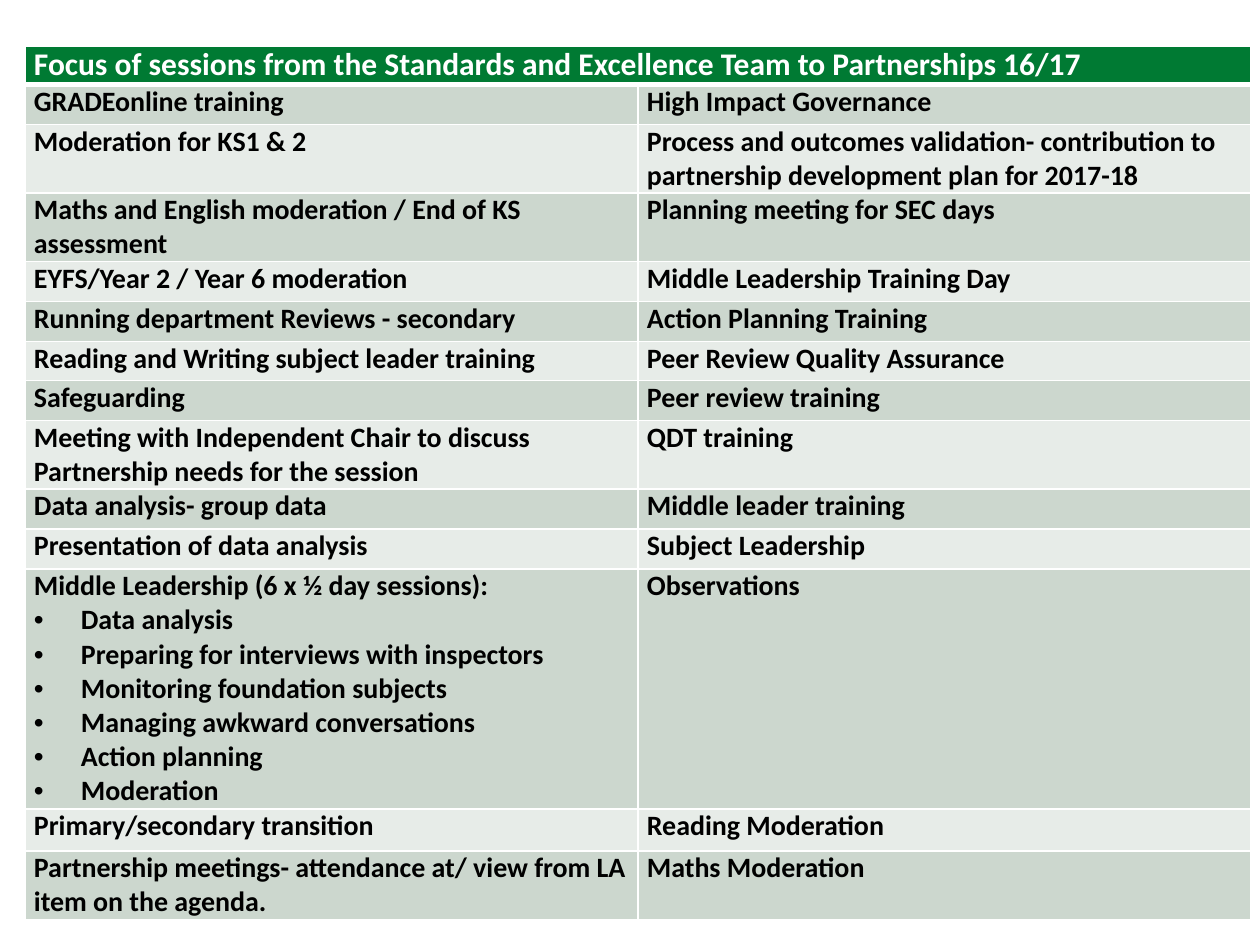
import pptx
import pptx.util
from pptx.dml.color import RGBColor
from pptx.oxml.ns import qn
from lxml import etree

HEADING = "Focus of sessions from the Standards and Excellence Team to Partnerships 16/17"
# row height in px, left paragraphs, right paragraphs; "•" marks a bullet
SESSIONS = [
    (40, ["GRADEonline training"], ["High Impact Governance"]),
    (68, ["Moderation for KS1 & 2"],
     ["Process and outcomes validation- contribution to partnership development plan for 2017-18"]),
    (68, ["Maths and English moderation / End of KS assessment"], ["Planning meeting for SEC days"]),
    (40, ["EYFS/Year 2 / Year 6 moderation"], ["Middle Leadership Training Day"]),
    (40, ["Running department Reviews - secondary"], ["Action Planning Training"]),
    (39, ["Reading and Writing subject leader training"], ["Peer Review Quality Assurance"]),
    (40, ["Safeguarding"], ["Peer review training"]),
    (68, ["Meeting with Independent Chair to discuss Partnership needs for the session"],
     ["QDT training"]),
    (40, ["Data analysis- group data"], ["Middle leader training"]),
    (40, ["Presentation of data analysis"], ["Subject Leadership"]),
    (240, ["Middle Leadership (6 x ½ day sessions):", "•Data analysis",
           "•Preparing for interviews with inspectors", "•Monitoring foundation subjects",
           "•Managing awkward conversations", "•Action planning", "•Moderation"],
     ["Observations"]),
    (42, ["Primary/secondary transition"], ["Reading Moderation"]),
    (68, ["Partnership meetings- attendance at/ view from LA item on the agenda."],
     ["Maths Moderation"]),
]
COLOURS = {"header": "007A33", "odd": "CCD7CE", "even": "E7ECE8",
           "white": "FFFFFF", "text": "000000"}
LEFT, TOP, COL_W, HEADER_H = 25, 46, 613, 38
PX = 914400 / 126


def emu(px):
    return pptx.util.Emu(round(px * PX))


def set_borders(cell, bottom):
    tcPr = cell._tc.get_or_add_tcPr()
    for tag, width in (("a:lnL", 1), ("a:lnR", 1), ("a:lnT", 1), ("a:lnB", bottom)):
        ln = etree.SubElement(tcPr, qn(tag), w=str(pptx.util.Pt(width)))
        fill = etree.SubElement(ln, qn("a:solidFill"))
        etree.SubElement(fill, qn("a:srgbClr"), val=COLOURS["white"])


def add_bullet(p):
    pPr = p._p.get_or_add_pPr()
    pPr.set("marL", str(emu(47)))
    pPr.set("indent", str(emu(-47)))
    etree.SubElement(pPr, qn("a:buFont"), typeface="Arial")
    etree.SubElement(pPr, qn("a:buChar"), char="•")


def fill_cell(cell, lines, fill, colour="text", size=16, bottom=1):
    margins = {"margin_left": emu(9), "margin_right": emu(9), "margin_top": 0, "margin_bottom": 0}
    for name, value in margins.items():
        setattr(cell, name, value)
    set_borders(cell, bottom)
    cell.fill.solid()
    cell.fill.fore_color.rgb = RGBColor.from_string(COLOURS[fill])
    tf = cell.text_frame
    for i, line in enumerate(lines):
        p = tf.add_paragraph() if i else tf.paragraphs[0]
        if line.startswith("•"):
            add_bullet(p)
        r = p.add_run()
        r.text = line.lstrip("•")
        for name, value in {"name": "Calibri", "size": pptx.util.Pt(size), "bold": True}.items():
            setattr(r.font, name, value)
        r.font.color.rgb = RGBColor.from_string(COLOURS[colour])


prs = pptx.Presentation()
prs.slide_width, prs.slide_height = pptx.util.Inches(10), pptx.util.Inches(7.5)
s = prs.slides.add_slide(prs.slide_layouts[6])

heights = [HEADER_H] + [height for height, _, _ in SESSIONS]
table = s.shapes.add_table(len(heights), 2, emu(LEFT), emu(TOP),
                           emu(2 * COL_W), emu(sum(heights))).table
for col in table.columns:
    col.width = emu(COL_W)
for row, height in zip(table.rows, heights):
    row.height = emu(height)

table.cell(0, 0).merge(table.cell(0, 1))
for c, lines in enumerate(([HEADING], [])):
    fill_cell(table.cell(0, c), lines, "header", "white", 18, 3)
for i, (_, *columns) in enumerate(SESSIONS, 1):
    for c, lines in enumerate(columns):
        fill_cell(table.cell(i, c), lines, "odd" if i % 2 else "even")

prs.save("out.pptx")
